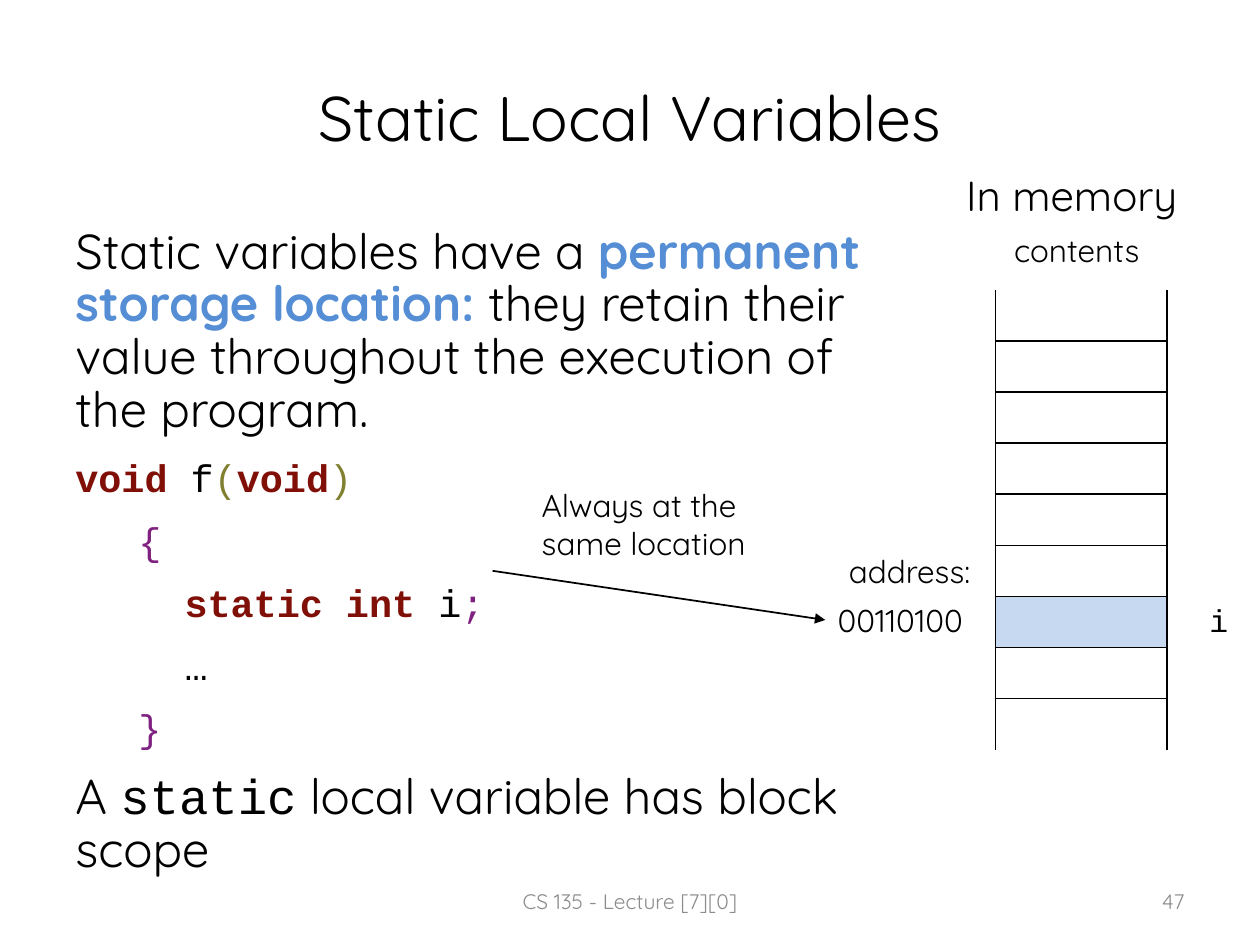
import lxml.etree
import pptx
import pptx.dml.color
import pptx.enum.shapes
import pptx.enum.text
import pptx.oxml
import pptx.oxml.ns
import pptx.util

Pt = pptx.util.Pt
Align = pptx.enum.text.PP_ALIGN
Anchor = pptx.enum.text.MSO_ANCHOR
AutoSize = pptx.enum.text.MSO_AUTO_SIZE

COLORS = {
    "black": "000000",
    "emphasis": "558ED5",
    "keyword": "800F07",
    "parenthesis": "808030",
    "brace": "7F2180",
    "highlight": "C6D9F1",
    "footer": "8C8C8C",
}
SANS = "Quicksand"
MONO = "Courier New"


def color(name):
    return pptx.dml.color.RGBColor.from_string(COLORS[name])


def add_element(parent, tag, **attributes):
    element = lxml.etree.SubElement(parent, pptx.oxml.ns.qn(tag))
    for key, value in attributes.items():
        element.set(key, value)
    return element


class SlideBuilder:
    def __init__(self, presentation):
        self.slide = presentation.slides.add_slide(presentation.slide_layouts[5])

    def format_run(self, run, size, font=SANS, color_name="black", bold=False):
        run.font.size = Pt(size)
        run.font.name = font
        run.font.bold = bold
        run.font.color.rgb = color(color_name)

    def title(self, text, left, top, width, height, size):
        title = self.slide.shapes.title
        title.left, title.top, title.width, title.height = map(Pt, (left, top, width, height))
        title.text_frame.text = text
        title.text_frame.vertical_anchor = Anchor.MIDDLE
        paragraph = title.text_frame.paragraphs[0]
        paragraph.alignment = Align.CENTER
        self.format_run(paragraph.runs[0], size)

    def text(self, text, left, top, width, height, size=18, font=SANS, color_name="black",
             wrap=False, grow=True, align=Align.LEFT, anchor=Anchor.TOP):
        box = self.slide.shapes.add_textbox(*map(Pt, (left, top, width, height)))
        frame = box.text_frame
        frame.text = text
        frame.word_wrap = wrap
        frame.auto_size = AutoSize.SHAPE_TO_FIT_TEXT if grow else AutoSize.NONE
        frame.vertical_anchor = anchor
        frame.paragraphs[0].alignment = align
        self.format_run(frame.paragraphs[0].runs[0], size, font, color_name)
        return box

    def body(self, paragraphs, left, top, width, height):
        box = self.slide.shapes.add_textbox(*map(Pt, (left, top, width, height)))
        frame = box.text_frame
        frame.word_wrap = True
        for index, (size, font, indent, runs) in enumerate(paragraphs):
            paragraph = frame.add_paragraph() if index else frame.paragraphs[0]
            paragraph.line_spacing = 0.9
            paragraph.space_after = Pt(12)
            paragraph._p.get_or_add_pPr().set("marL", str(Pt(indent)))
            for text, color_name, bold, *other_font in runs:
                run = paragraph.add_run()
                run.text = text
                self.format_run(run, size, *(other_font or [font]), color_name, bold)

    def memory_table(self, left, top, width, row_height, rows, highlighted):
        frame = self.slide.shapes.add_table(
            rows, 1, *map(Pt, (left, top, width, row_height * rows)))
        table = frame.table
        table.first_row = False
        table.horz_banding = False
        for index in range(rows):
            table.rows[index].height = Pt(row_height)
            cell = table.cell(index, 0)
            open_sides = {0: "T", rows - 1: "B"}.get(index, "")
            self.borders(cell, open_sides)
            if index == highlighted:
                cell.fill.solid()
                cell.fill.fore_color.rgb = color("highlight")
            else:
                cell.fill.background()

    def borders(self, cell, open_sides):
        properties = cell._tc.get_or_add_tcPr()
        for side in "LRTB":
            line = add_element(properties, "a:ln" + side, w=str(Pt(1)))
            if side in open_sides:
                add_element(line, "a:noFill")
            else:
                fill = add_element(line, "a:solidFill")
                add_element(fill, "a:srgbClr", val=COLORS["black"])

    def arrow(self, start_left, start_top, target):
        connector = self.slide.shapes.add_connector(
            pptx.enum.shapes.MSO_CONNECTOR.STRAIGHT, Pt(start_left), Pt(start_top),
            target.left, target.top + target.height // 2)
        connector.end_connect(target, 1)
        connector.line.width = Pt(1)
        connector.line.color.rgb = color("black")
        add_element(connector.line._get_or_add_ln(), "a:tailEnd", type="triangle")
        add_element(connector._element.spPr, "a:effectLst")


def main():
    presentation = pptx.Presentation()
    presentation.slide_width = Pt(720)
    presentation.slide_height = Pt(540)
    builder = SlideBuilder(presentation)

    builder.title("Static Local Variables", 36, 21.6, 648, 90, 36)
    builder.body([
        (28, SANS, 0, [
            ("Static variables have a ", "black", False),
            ("permanent storage location: ", "emphasis", True),
            ("they retain their value throughout the execution of the program.", "black", False),
        ]),
        (22, MONO, 0, [
            ("void", "keyword", True),
            (" f", "black", False),
            ("(", "parenthesis", False),
            ("void", "keyword", True),
            (")", "parenthesis", False),
        ]),
        (22, MONO, 36, [("{", "brace", False)]),
        (22, MONO, 62.4, [
            ("static int ", "keyword", True),
            ("i", "black", False),
            (";", "brace", False),
        ]),
        (22, MONO, 62.4, [("…", "black", False)]),
        (22, MONO, 36, [("}", "brace", False)]),
        (28, SANS, 0, [
            ("A ", "black", False),
            ("static", "black", False, MONO),
            (" local variable has block scope", "black", False),
        ]),
    ], 36, 126, 483, 356.4)

    builder.memory_table(568.8, 165.6, 98, 29.2, rows=9, highlighted=6)
    builder.text("In memory", 545, 93.6, 139, 36, size=24)
    builder.text("contents", 572.4, 128.2, 91.4, 29)
    address = builder.text("00110100", 471.6, 339.8, 95, 29)
    builder.text("i", 684, 339.8, 25.2, 29, font=MONO)
    builder.text("address:", 478, 311.8, 88.6, 29)
    builder.arrow(281.5, 326.2, address)
    builder.text("Always at the same location", 302.4, 274.3, 159, 51, wrap=True)

    footer_style = dict(size=12, color_name="footer", wrap=True, grow=False, anchor=Anchor.MIDDLE)
    builder.text("CS 135 - Lecture [7][0]", 246, 500.4, 228, 28.8, align=Align.CENTER, **footer_style)
    builder.text("47", 516, 500.4, 168, 28.8, align=Align.RIGHT, **footer_style)

    presentation.save("out.pptx")


if __name__ == "__main__":
    main()
